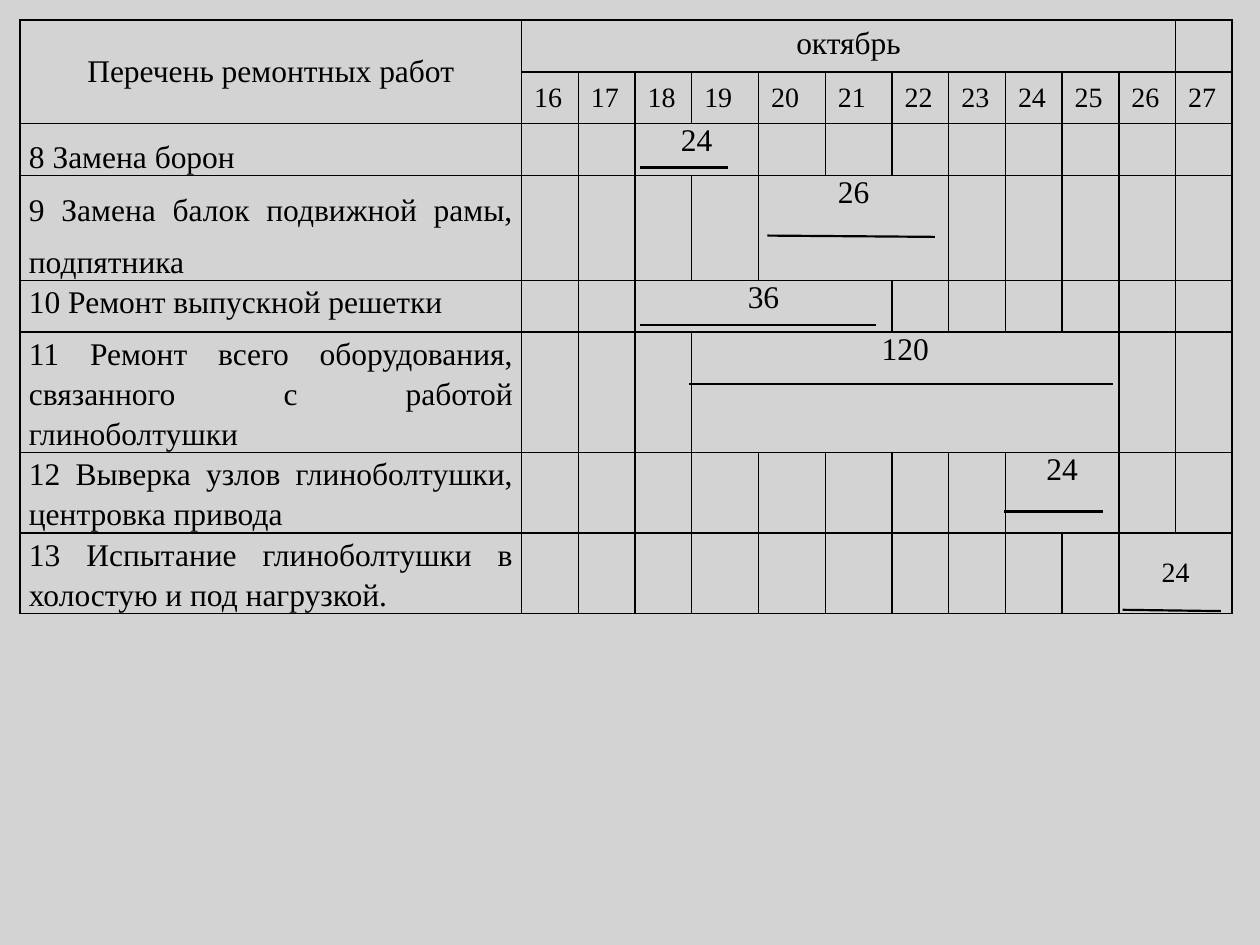
from lxml.etree import SubElement
from pptx import Presentation
from pptx.dml.color import RGBColor
from pptx.enum.shapes import MSO_CONNECTOR
from pptx.enum.text import MSO_ANCHOR, PP_ALIGN
from pptx.oxml.ns import qn
from pptx.util import Inches, Pt

COLORS = {"background": "D3D3D3", "ink": "000000"}
FONT = "Times New Roman"
FIRST_DAY, LAST_DAY = 16, 27
DAY_WIDTHS = [0.45] * 3 + [0.53] * 3 + [0.45] * 6
HEADER_HEIGHT = 0.41

# work, row height, line spacing, space around, hours, first and last day
WORKS = [
    ("8 Замена борон", 0.41, 1.5, 0, "24", 18, 19),
    ("9 Замена балок подвижной рамы, подпятника", 0.83, 1.5, 0, "26", 20, 22),
    ("10 Ремонт выпускной решетки", 0.41, 1.15, 6, "36", 18, 21),
    ("11 Ремонт всего оборудования, связанного с работой глиноболтушки",
     0.95, 1.15, 0, "120", 19, 25),
    ("12 Выверка узлов глиноболтушки, центровка привода",
     0.64, 1.15, 0, "24", 24, 25),
    ("13 Испытание глиноболтушки в холостую и под нагрузкой.",
     0.64, 1.15, 0, "24", 26, 27),
]

# start x, start y, end x, end y
DURATION_LINES = [
    (5.08, 1.33, 5.78, 1.33),
    (6.09, 1.87, 7.42, 1.88),
    (5.08, 2.58, 6.95, 2.58),
    (5.47, 3.05, 8.83, 3.05),
    (7.97, 4.06, 8.75, 4.06),
    (8.91, 4.84, 9.69, 4.85),
]


def color(name):
    return RGBColor.from_string(COLORS[name])


def day_column(day):
    return day - FIRST_DAY + 1


class ScheduleSlide:
    """Holds the slide and the common text and line style."""

    def __init__(self, presentation):
        self.slide = presentation.slides.add_slide(presentation.slide_layouts[6])
        fill = self.slide.background.fill
        fill.solid()
        fill.fore_color.rgb = color("background")

    def grid(self, left, top, widths, heights):
        """Add a plain table with a thin border round every cell."""
        table = self.slide.shapes.add_table(
            len(heights), len(widths), Inches(left), Inches(top),
            Inches(sum(widths)), Inches(sum(heights))).table
        table.first_row = table.horz_banding = False
        for column, width in zip(table.columns, widths):
            column.width = Inches(width)
        for row, height in zip(table.rows, heights):
            row.height = Inches(height)
        for cell in table.iter_cells():
            self.border(cell)
            cell.fill.background()
        return table

    def border(self, cell):
        properties = cell._tc.get_or_add_tcPr()
        for side in ("a:lnL", "a:lnR", "a:lnT", "a:lnB"):
            line = SubElement(properties, qn(side), w=str(Pt(1)))
            fill = SubElement(line, qn("a:solidFill"))
            SubElement(fill, qn("a:srgbClr"), val=COLORS["ink"])

    def cell_text(self, cell, text, size=18, align=PP_ALIGN.CENTER, middle=False,
                  tight=False, spacing=None, around=0):
        """Fill a cell; tight narrows the side margins and drops the others."""
        if tight:
            cell.margin_left = cell.margin_right = Inches(0.07)
            cell.margin_top = cell.margin_bottom = 0
        if middle:
            cell.vertical_anchor = MSO_ANCHOR.MIDDLE
        cell.text = text
        paragraph = cell.text_frame.paragraphs[0]
        paragraph.alignment = align
        if spacing:
            paragraph.line_spacing = spacing
        if around:
            paragraph.space_before = paragraph.space_after = Pt(around)
        paragraph.font.name = FONT
        paragraph.font.size = Pt(size)
        paragraph.font.color.rgb = color("ink")

    def line(self, *ends):
        connector = self.slide.shapes.add_connector(
            MSO_CONNECTOR.STRAIGHT, *(Inches(end) for end in ends))
        connector.line.color.rgb = color("ink")
        connector.line.width = Pt(1.25)
        SubElement(connector._element.spPr, qn("a:effectLst"))


def main():
    presentation = Presentation()
    presentation.slide_width = Inches(10)
    presentation.slide_height = Inches(7.5)
    schedule = ScheduleSlide(presentation)

    heights = [HEADER_HEIGHT] * 2 + [work[1] for work in WORKS]
    table = schedule.grid(0.16, 0.16, [3.98] + DAY_WIDTHS, heights)

    table.cell(0, 0).merge(table.cell(1, 0))
    schedule.cell_text(table.cell(0, 0), "Перечень ремонтных работ", middle=True)
    table.cell(0, 1).merge(table.cell(0, day_column(LAST_DAY - 1)))
    schedule.cell_text(table.cell(0, 1), "октябрь")
    for day in range(FIRST_DAY, LAST_DAY + 1):
        schedule.cell_text(table.cell(1, day_column(day)), str(day), size=16,
                           align=PP_ALIGN.LEFT, middle=True)

    for row, (work, _, spacing, around, hours, start, end) in enumerate(WORKS, 2):
        schedule.cell_text(table.cell(row, 0), work, align=PP_ALIGN.JUSTIFY,
                           tight=True, spacing=spacing, around=around)
        duration = table.cell(row, day_column(start))
        duration.merge(table.cell(row, day_column(end)))
        is_last = row == len(WORKS) + 1
        schedule.cell_text(duration, hours, size=16 if is_last else 18,
                           middle=is_last, tight=not is_last)

    for ends in DURATION_LINES:
        schedule.line(*ends)

    presentation.save("out.pptx")


if __name__ == "__main__":
    main()
